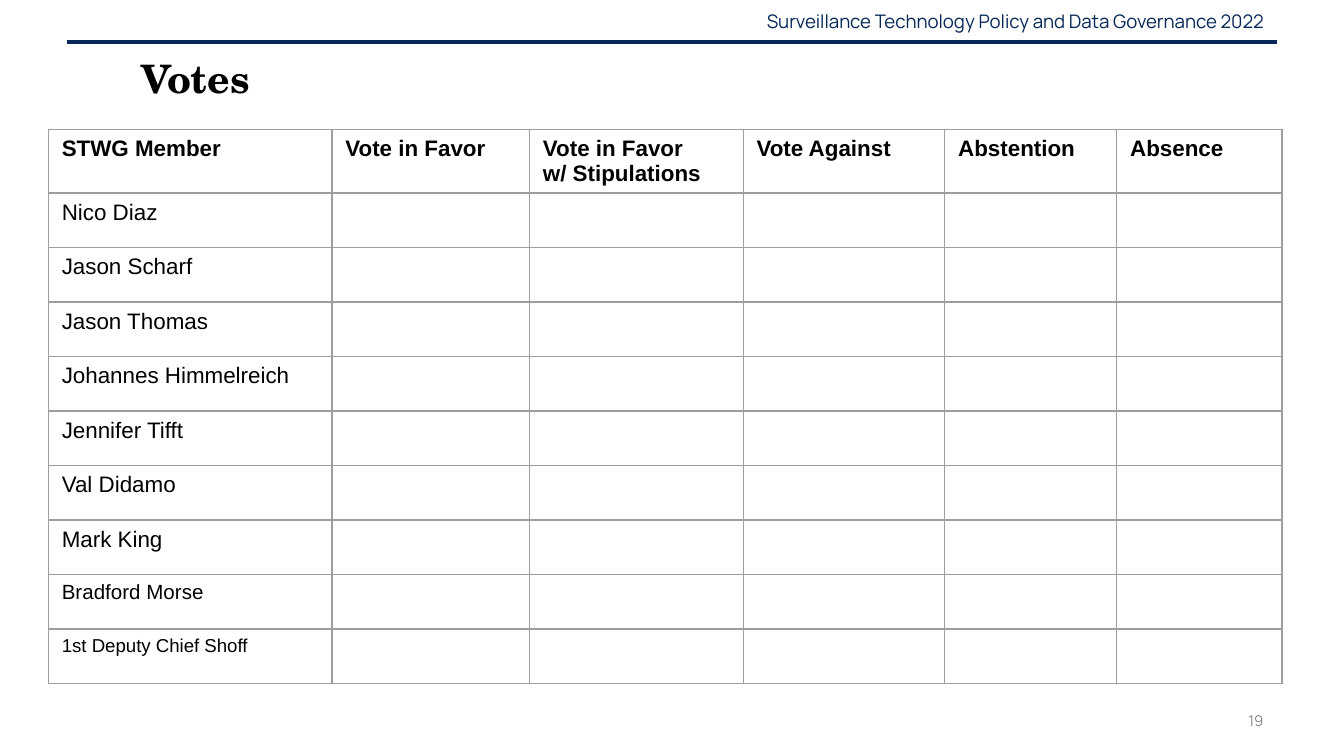
from lxml import etree
from pptx import Presentation
from pptx.dml.color import RGBColor
from pptx.enum.shapes import MSO_CONNECTOR
from pptx.enum.text import MSO_ANCHOR, MSO_AUTO_SIZE, PP_ALIGN
from pptx.oxml.ns import qn
from pptx.util import Inches, Pt

LINE = MSO_CONNECTOR.STRAIGHT
TOP, MIDDLE = MSO_ANCHOR.TOP, MSO_ANCHOR.MIDDLE
LEFT, RIGHT = PP_ALIGN.LEFT, PP_ALIGN.RIGHT
FIXED = MSO_AUTO_SIZE.NONE

WIDE, HIGH = Inches(10), Inches(5.625)
COLORS = {"navy": "062858", "gray": "888888", "edge": "9E9E9E", "ink": "000000"}
HEADS = ["STWG Member", "Vote in Favor", "Vote in Favor\vw/ Stipulations",
         "Vote Against", "Abstention", "Absence"]
NAMES = ["Nico Diaz", "Jason Scharf", "Jason Thomas", "Johannes Himmelreich",
         "Jennifer Tifft", "Val Didamo", "Mark King", "Bradford Morse",
         "1st Deputy Chief Shoff"]
SIZES = {"Bradford Morse": 11, "1st Deputy Chief Shoff": 10}
COLS = [21.1, 14.7, 15.9, 15, 12.8, 12.3]
ROW = 7.21


def across(share):
    return round(WIDE * share / 100)


def down(share):
    return round(HIGH * share / 100)


def area(left, top, width, height):
    return across(left), down(top), across(width), down(height)


def style(para, color, **look):
    for run in para.runs:
        run.font.color.rgb = RGBColor.from_string(COLORS[color])
        for key, value in look.items():
            setattr(run.font, key, value)


def fill_frame(frame, text, anchor, align):
    form = {"text": text, "word_wrap": True, "auto_size": FIXED,
            "vertical_anchor": anchor}
    for key, value in form.items():
        setattr(frame, key, value)
    para = frame.paragraphs[0]
    para.alignment = align
    return para


def add_label(slide, text, place, size, color):
    box = slide.shapes.add_textbox(*area(*place))
    para = fill_frame(box.text_frame, text, MIDDLE, RIGHT)
    style(para, color, size=Pt(size), name="Manrope")


def add_rule(slide, left, right, top):
    rule = slide.shapes.add_connector(LINE, across(left), down(top),
                                      across(right), down(top))
    rule.line.color.rgb = RGBColor.from_string(COLORS["navy"])
    rule.line.width = Pt(2.25)
    etree.SubElement(rule._element.spPr, qn("a:effectLst"))


def set_title(slide, text, place):
    title = slide.shapes.title
    title.left, title.top, title.width, title.height = area(*place)
    para = fill_frame(title.text_frame, text, TOP, LEFT)
    para.line_spacing, para.space_before = 1.15, Pt(12)
    style(para, "ink", size=Pt(21), name="TeX Gyre Schola", bold=True)


def add_edges(cell):
    props = cell._tc.get_or_add_tcPr()
    for spot, side in enumerate(("lnL", "lnR", "lnT", "lnB")):
        edge = etree.Element(qn("a:" + side), w=str(Pt(0.75)))
        fill = etree.SubElement(edge, qn("a:solidFill"))
        etree.SubElement(fill, qn("a:srgbClr"), val=COLORS["edge"])
        props.insert(spot, edge)


def set_cell(cell, text, size, bold):
    cell.fill.background()
    add_edges(cell)
    cell.text = text
    style(cell.text_frame.paragraphs[0], "ink", size=Pt(size), name="Arial", bold=bold)


def add_votes(slide, left, top):
    rows = [HEADS] + [[name] + [""] * (len(HEADS) - 1) for name in NAMES]
    place = area(left, top, sum(COLS), ROW * len(rows))
    table = slide.shapes.add_table(len(rows), len(COLS), *place).table
    table.first_row = table.horz_banding = False
    for col, share in zip(table.columns, COLS):
        col.width = across(share)
    for num, (row, texts) in enumerate(zip(table.rows, rows)):
        row.height = down(ROW)
        for cell, text in zip(row.cells, texts):
            set_cell(cell, text, SIZES.get(text, 12), num == 0)


def main():
    deck = Presentation()
    deck.slide_width, deck.slide_height = WIDE, HIGH
    slide = deck.slides.add_slide(deck.slide_layouts[5])
    add_label(slide, "Surveillance Technology Policy and Data Governance 2022",
              (52.1, 0.18, 42.9, 5.33), 10, "navy")
    add_label(slide, "19", (71.7, 92.6, 23.3, 5.33), 8, "gray")
    add_rule(slide, 5, 95, 5.51)
    set_title(slide, "Votes", (9.5, 5.33, 14.4, 15.6))
    add_votes(slide, 3.6, 17.1)
    deck.save("out.pptx")


if __name__ == "__main__":
    main()
